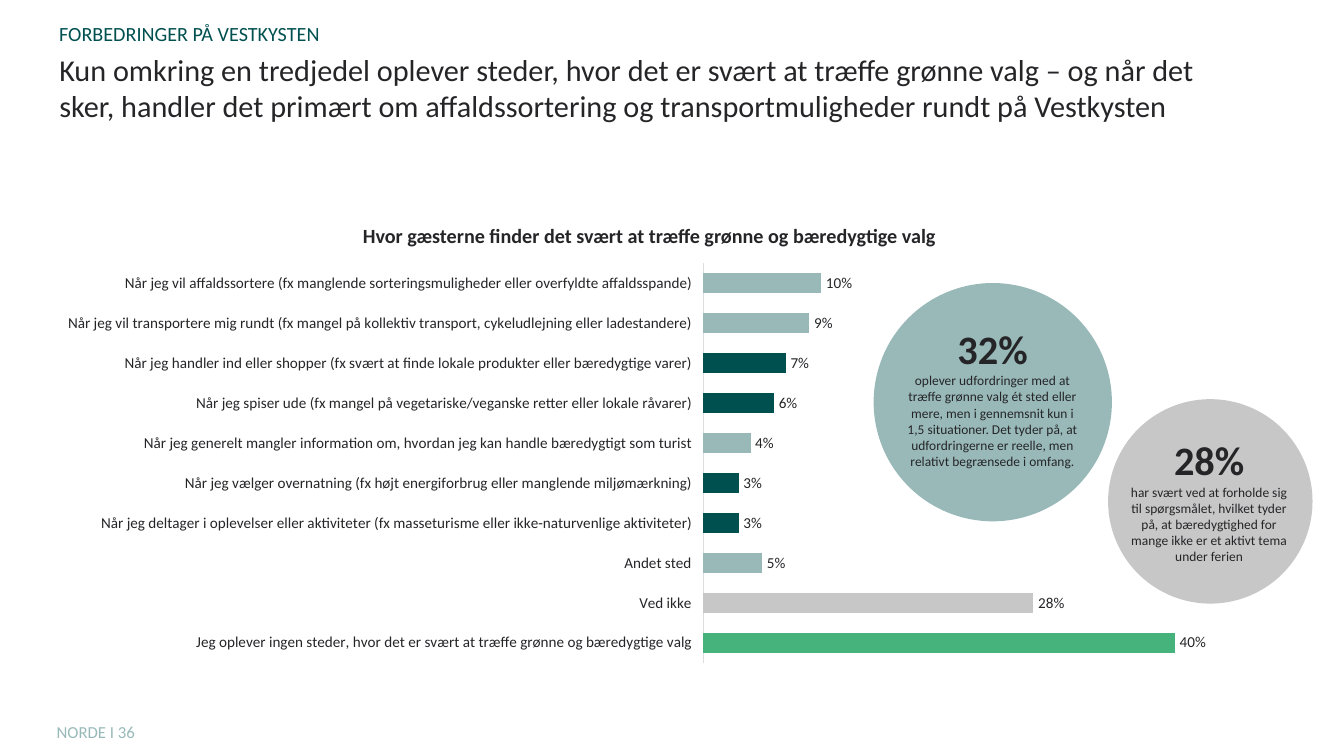
"""Build a slide on where guests find it hard to make green choices."""
from dataclasses import dataclass

from lxml import etree
from pptx import Presentation
from pptx.chart.data import CategoryChartData
from pptx.dml.color import RGBColor
from pptx.enum.chart import XL_CHART_TYPE, XL_LABEL_POSITION, XL_TICK_LABEL_POSITION, XL_TICK_MARK
from pptx.enum.shapes import MSO_SHAPE
from pptx.enum.text import MSO_ANCHOR, MSO_AUTO_SIZE, PP_ALIGN
from pptx.oxml.ns import qn
from pptx.slide import Slide
from pptx.text.text import Font, TextFrame
from pptx.util import Inches, Pt

BAR = XL_CHART_TYPE.BAR_CLUSTERED
OUTSIDE_END = XL_LABEL_POSITION.OUTSIDE_END
LOW = XL_TICK_LABEL_POSITION.LOW
NO_TICK = XL_TICK_MARK.NONE
OVAL = MSO_SHAPE.OVAL
TOP = MSO_ANCHOR.TOP
FIXED = MSO_AUTO_SIZE.NONE
LEFT, CENTER = PP_ALIGN.LEFT, PP_ALIGN.CENTER

INK = RGBColor(0x25, 0x25, 0x28)
PINE = RGBColor(0x00, 0x50, 0x50)
SAGE = RGBColor(0x99, 0xB9, 0xB9)
GRAY = RGBColor(0xC7, 0xC7, 0xC7)
GREEN = RGBColor(0x47, 0xB3, 0x7C)
AXIS = RGBColor(0xDD, 0xDD, 0xE0)
FONT = "Calibri"

WIDTH, HEIGHT = Inches(11.11), Inches(6.25)
COLUMN, ROW = WIDTH / 100, HEIGHT / 100


@dataclass(frozen=True)
class Area:
    """A rectangle in hundredths of the slide's width and height."""
    column: float
    row: float
    columns: float
    rows: float

    def bounds(self) -> tuple[int, int, int, int]:
        """Return left, top, width and height in slide units."""
        return (round(self.column * COLUMN), round(self.row * ROW),
                round(self.columns * COLUMN), round(self.rows * ROW))


@dataclass(frozen=True)
class Line:
    """A paragraph with its format."""
    text: str
    size: float
    color: RGBColor = INK
    bold: bool = False
    align: PP_ALIGN = LEFT


@dataclass(frozen=True)
class Answer:
    """A bar of the chart."""
    label: str
    share: float
    color: RGBColor


@dataclass(frozen=True)
class Bubble:
    """A circle with a key figure and its explanation."""
    circle: Area
    text: Area
    color: RGBColor
    figure: str
    remark: str


HEADLINE_AREA = Area(3.51, 5.92, 89.65, 8)
HEADLINE = Line("Kun omkring en tredjedel oplever steder, hvor det er svært at træffe grønne valg – og når det "
                "sker, handler det primært om affaldssortering og transportmuligheder rundt på Vestkysten", 18)
LABELS = [
    (Area(3.33, 94.72, 22.23, 4.32), Line("NORDE I 36", 10, SAGE)),
    (Area(3.51, 2.08, 89.65, 4), Line("FORBEDRINGER PÅ VESTKYSTEN", 12, PINE)),
    (Area(3.51, 28.8, 89.65, 4.8),
     Line("Hvor gæsterne finder det svært at træffe grønne og bæredygtige valg", 12, INK, True, CENTER)),
]
CHART_AREA = Area(3.51, 33.76, 105.22, 55.04)
PLOT_SHARES = {"x": 0.464, "y": 0.02, "w": 0.517, "h": 0.96}
ANSWERS = [
    Answer("Når jeg vil affaldssortere (fx manglende sorteringsmuligheder eller overfyldte affaldsspande)", 0.10, SAGE),
    Answer("Når jeg vil transportere mig rundt (fx mangel på kollektiv transport, cykeludlejning eller ladestandere)",
           0.09, SAGE),
    Answer("Når jeg handler ind eller shopper (fx svært at finde lokale produkter eller bæredygtige varer)", 0.07, PINE),
    Answer("Når jeg spiser ude (fx mangel på vegetariske/veganske retter eller lokale råvarer)", 0.06, PINE),
    Answer("Når jeg generelt mangler information om, hvordan jeg kan handle bæredygtigt som turist", 0.04, SAGE),
    Answer("Når jeg vælger overnatning (fx højt energiforbrug eller manglende miljømærkning)", 0.03, PINE),
    Answer("Når jeg deltager i oplevelser eller aktiviteter (fx masseturisme eller ikke-naturvenlige aktiviteter)",
           0.03, PINE),
    Answer("Andet sted", 0.05, SAGE),
    Answer("Ved ikke", 0.28, GRAY),
    Answer("Jeg oplever ingen steder, hvor det er svært at træffe grønne og bæredygtige valg", 0.40, GREEN),
]
BUBBLES = [
    Bubble(Area(65, 37.44, 17.73, 31.52), Area(66.25, 42.08, 15.21, 20.96), SAGE, "32%",
           "oplever udfordringer med at træffe grønne valg ét sted eller mere, men i gennemsnit kun i 1,5 "
           "situationer. Det tyder på, at udfordringerne er reelle, men relativt begrænsede i omfang."),
    Bubble(Area(82.45, 52.8, 15.21, 27.04), Area(82.9, 56.8, 14.13, 18.88), GRAY, "28%",
           "har svært ved at forholde sig til spørgsmålet, hvilket tyder på, at bæredygtighed for mange "
           "ikke er et aktivt tema under ferien"),
]


def style_font(font: Font, size: float, color: RGBColor = INK, bold: bool = False) -> None:
    """Set the face, size, colour and weight of a font."""
    font.name, font.size, font.bold = FONT, Pt(size), bold
    font.color.rgb = color


def write_lines(frame: TextFrame, lines: list[Line]) -> None:
    """Fill a text frame with formatted paragraphs."""
    frame.word_wrap, frame.auto_size, frame.vertical_anchor = True, FIXED, TOP
    for index, line in enumerate(lines):
        para = frame.add_paragraph() if index else frame.paragraphs[0]
        para.text, para.alignment = line.text, line.align
        style_font(para.font, line.size, line.color, line.bold)


def add_text(page: Slide, area: Area, lines: list[Line]) -> None:
    """Add a text box to the slide."""
    box = page.shapes.add_textbox(*area.bounds())
    write_lines(box.text_frame, lines)


def add_headline(page: Slide) -> None:
    """Place and fill the title placeholder."""
    title = page.shapes.title
    title.left, title.top, title.width, title.height = HEADLINE_AREA.bounds()
    write_lines(title.text_frame, [HEADLINE])


def add_answer_chart(page: Slide) -> None:
    """Add the bar chart of answers."""
    data = CategoryChartData(number_format="0%")
    data.categories = [answer.label for answer in ANSWERS]
    data.add_series("Series 1", [answer.share for answer in ANSWERS])
    chart = page.shapes.add_chart(BAR, *CHART_AREA.bounds(), data).chart
    chart.has_title = chart.has_legend = False
    style_font(chart.font, 10)

    categories, values = chart.category_axis, chart.value_axis
    categories.reverse_order = True
    categories.major_tick_mark = categories.minor_tick_mark = NO_TICK
    categories.tick_label_position = LOW
    categories.format.line.color.rgb = AXIS
    categories.format.line.width = Pt(0.75)
    style_font(categories.tick_labels.font, 9)
    values.minimum_scale, values.maximum_scale = 0, 0.62
    values.has_major_gridlines = values.visible = False

    plot = chart.plots[0]
    plot.gap_width, plot.vary_by_categories = 100, False
    plot.has_data_labels = True
    labels = plot.data_labels
    labels.show_value, labels.position = True, OUTSIDE_END
    labels.number_format, labels.number_format_is_linked = "0%", False
    style_font(labels.font, 9)
    for index, answer in enumerate(ANSWERS):
        fill = plot.series[0].points[index].format.fill
        fill.solid()
        fill.fore_color.rgb = answer.color

    plot_area = chart.element.find(".//" + qn("c:plotArea"))
    for old_layout in plot_area.findall(qn("c:layout")):
        plot_area.remove(old_layout)
    layout = etree.Element(qn("c:layout"))
    manual = etree.SubElement(layout, qn("c:manualLayout"))
    settings = {"layoutTarget": "inner", "xMode": "edge", "yMode": "edge", **PLOT_SHARES}
    for tag, value in settings.items():
        etree.SubElement(manual, qn(f"c:{tag}")).set("val", str(value))
    plot_area.insert(0, layout)


def add_bubble(page: Slide, bubble: Bubble) -> None:
    """Add a circle and the text over it."""
    circle = page.shapes.add_shape(OVAL, *bubble.circle.bounds())
    circle.shadow.inherit = False
    circle.fill.solid()
    circle.fill.fore_color.rgb = bubble.color
    circle.line.fill.background()
    add_text(page, bubble.text, [Line(bubble.figure, 24, bold=True, align=CENTER),
                                 Line(bubble.remark, 8, align=CENTER)])


def main() -> None:
    """Build and save the deck."""
    deck = Presentation()
    deck.slide_width, deck.slide_height = WIDTH, HEIGHT
    page = deck.slides.add_slide(deck.slide_layouts.get_by_name("Title Only"))
    add_headline(page)
    for area, line in LABELS:
        add_text(page, area, [line])
    add_answer_chart(page)
    for bubble in BUBBLES:
        add_bubble(page, bubble)
    deck.save("out.pptx")


if __name__ == "__main__":
    main()
